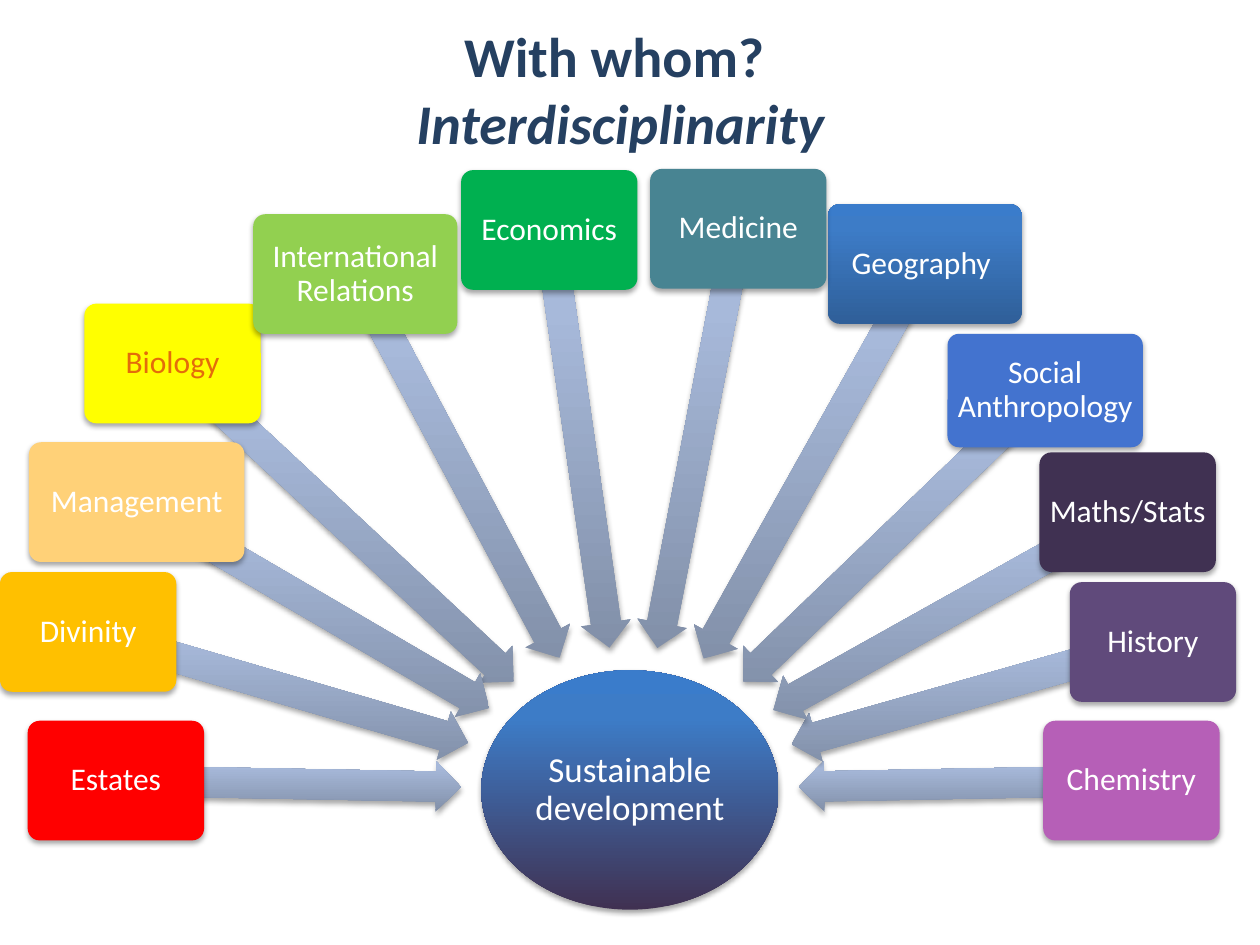
import math
from dataclasses import dataclass

import pptx
import pptx.dml.color
import pptx.enum.shapes
import pptx.enum.text
import pptx.oxml
import pptx.oxml.ns
import pptx.util
from pptx.util import Inches

COLORS = {
    "white": "FFFFFF", "navy": "254061", "orange": "E46C0A",
    "yellow": "FFFF00", "sand": "FFD178", "amber": "FFC000", "red": "FF0000",
    "green": "00B050", "blue": "4373CF", "lime": "92D050", "teal": "488492",
    "orchid": "B65FB7", "violet": "604A7B", "plum": "403152",
    "deep blue": "2F5F99", "mid blue": "3D7CC7", "bright blue": "3A7CCB",
    "slate": "818FA8", "mist": "A7B9DA", "pale mist": "A7BADC",
    "shadow": "000000",
}
GRADIENTS = {
    "hub": ("plum", "mid blue", "bright blue"),
    "ocean": ("deep blue", "mid blue", "bright blue"),
    "arrow": ("slate", "mist", "pale mist"),
}
STOPS = (0, 80000, 100000)
FONT = "Calibri"
ARROW_THICKNESS = 0.4
SHAPE = pptx.enum.shapes.MSO_SHAPE


@dataclass(frozen=True)
class Box:
    left: float
    top: float
    width: float
    height: float

    @property
    def center(self) -> tuple[float, float]:
        return self.left + self.width / 2, self.top + self.height / 2

    def lengths(self) -> list[int]:
        return [Inches(v) for v in (self.left, self.top, self.width, self.height)]


@dataclass(frozen=True)
class Discipline:
    label: str
    fill: str
    left: float
    top: float
    arrow_length: float
    width: float = 1.4
    height: float = 0.95
    text_color: str = "white"


HUB = Box(3.82, 5.32, 2.36, 1.9)
DISCIPLINES = [
    Discipline("Biology", "yellow", 0.67, 2.41, 3.7, text_color="orange"),
    Discipline("Management", "sand", 0.23, 3.51, 3.24, width=1.71),
    Discipline("Divinity", "amber", 0, 4.54, 3.14),
    Discipline("Estates", "red", 0.22, 5.72, 2.74),
    Discipline("Geography ", "ocean", 6.57, 1.62, 3.59, width=1.54),
    Discipline("Economics", "green", 3.66, 1.35, 3.35),
    Discipline("Social Anthropology", "blue", 7.52, 2.65, 3.33, width=1.55, height=0.9),
    Discipline("International Relations", "lime", 2.01, 1.7, 3.45, width=1.62),
    Discipline("Medicine", "teal", 5.16, 1.34, 3.39),
    Discipline("Chemistry", "orchid", 8.28, 5.72, 2.64),
    Discipline("History", "violet", 8.49, 4.62, 2.98, width=1.32),
    Discipline("Maths/Stats", "plum", 8.25, 3.59, 3.22),
]


def rgb(name: str):
    return pptx.dml.color.RGBColor.from_string(COLORS[name])


def apply_gradient(shape, names: tuple[str, ...]) -> None:
    shape.fill.gradient()
    shape.fill.gradient_angle = 90
    gradient = shape._element.spPr.find(pptx.oxml.ns.qn("a:gradFill"))
    gradient.set("rotWithShape", "0")
    stops = "".join(
        f'<a:gs pos="{pos}"><a:srgbClr val="{COLORS[name]}"/></a:gs>'
        for pos, name in zip(STOPS, names)
    )
    stop_list = pptx.oxml.parse_xml(
        f'<a:gsLst {pptx.oxml.ns.nsdecls("a")}>{stops}</a:gsLst>'
    )
    gradient.replace(gradient.find(pptx.oxml.ns.qn("a:gsLst")), stop_list)


def apply_shadow(shape) -> None:
    shape.shadow.inherit = False
    effects = shape._element.spPr.find(pptx.oxml.ns.qn("a:effectLst"))
    effects.append(pptx.oxml.parse_xml(
        f'<a:outerShdw {pptx.oxml.ns.nsdecls("a")} blurRad="{pptx.util.Pt(3.1)}" '
        f'dist="{pptx.util.Pt(1.8)}" dir="5400000" rotWithShape="0">'
        f'<a:srgbClr val="{COLORS["shadow"]}"><a:alpha val="35000"/></a:srgbClr>'
        "</a:outerShdw>"
    ))


def add_block(slide, kind, box: Box, fill: str, adjustments: tuple[float, ...] = ()):
    block = slide.shapes.add_shape(kind, *box.lengths())
    for index, value in enumerate(adjustments):
        block.adjustments[index] = value
    if fill in GRADIENTS:
        apply_gradient(block, GRADIENTS[fill])
    else:
        block.fill.solid()
        block.fill.fore_color.rgb = rgb(fill)
    block.line.fill.background()
    apply_shadow(block)
    return block


def write_text(shape, text: str, *, size: float, color: str = "white",
               bold: bool = False, italic_last: bool = False,
               inset: float | None = None, spacing: float | None = None) -> None:
    frame = shape.text_frame
    frame.word_wrap = True
    frame.vertical_anchor = pptx.enum.text.MSO_ANCHOR.MIDDLE
    if inset is not None:
        frame.margin_left = frame.margin_right = Inches(inset)
        frame.margin_top = frame.margin_bottom = Inches(inset)
    frame.text = text
    for paragraph in frame.paragraphs:
        paragraph.alignment = pptx.enum.text.PP_ALIGN.CENTER
        if spacing is not None:
            paragraph.line_spacing = spacing
        font = paragraph.runs[0].font
        font.name, font.size, font.bold = FONT, pptx.util.Pt(size), bold
        font.color.rgb = rgb(color)
    if italic_last:
        font.italic = True


def add_arrow(slide, start: tuple[float, float], length: float) -> None:
    x, y = start
    hub_x, hub_y = HUB.center
    angle = math.atan2(hub_y - y, hub_x - x)
    middle_x = x + length / 2 * math.cos(angle)
    middle_y = y + length / 2 * math.sin(angle)
    box = Box(middle_x - length / 2, middle_y - ARROW_THICKNESS / 2,
              length, ARROW_THICKNESS)
    arrow = add_block(slide, SHAPE.LEFT_ARROW, box, "arrow", (0.6, 0.5))
    arrow.rotation = math.degrees(angle) + 180


def add_discipline(slide, item: Discipline) -> None:
    box = Box(item.left, item.top, item.width, item.height)
    add_arrow(slide, box.center, item.arrow_length)
    card = add_block(slide, SHAPE.ROUNDED_RECTANGLE, box, item.fill, (0.1,))
    write_text(card, item.label, size=18, color=item.text_color,
               inset=0.04, spacing=0.9)


def main() -> None:
    deck = pptx.Presentation()
    deck.slide_width, deck.slide_height = Inches(10), Inches(7.5)
    slide = deck.slides.add_slide(deck.slide_layouts[6])

    hub = add_block(slide, SHAPE.OVAL, HUB, "hub")
    write_text(hub, "Sustainable development", size=20, inset=0.01, spacing=0.9)
    for item in DISCIPLINES:
        add_discipline(slide, item)

    title = slide.shapes.add_textbox(*Box(0.2, 0.08, 9.45, 1.25).lengths())
    write_text(title, "With whom? \nInterdisciplinarity", size=32, color="navy",
               bold=True, italic_last=True)
    deck.save("out.pptx")


if __name__ == "__main__":
    main()
